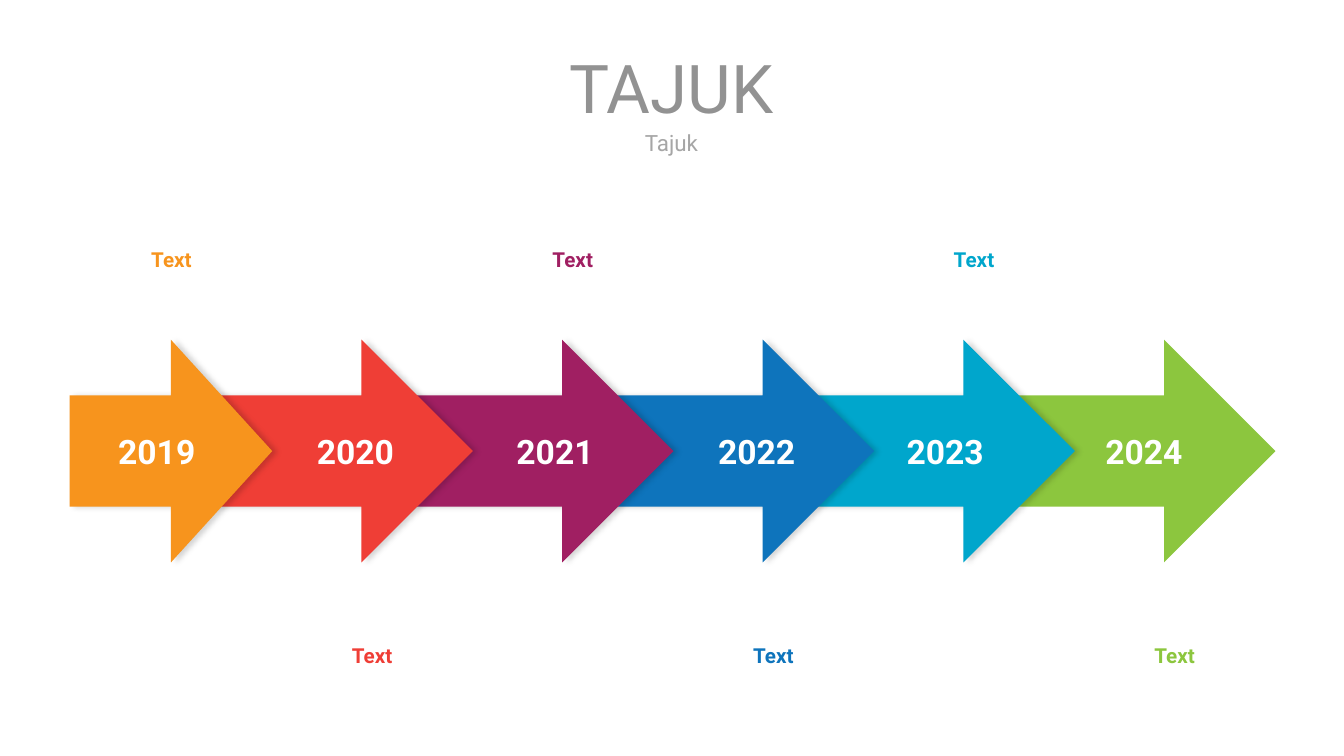
import pptx
import pptx.util
import pptx.dml.color
import pptx.enum.shapes
import pptx.enum.text
import lxml.etree
import pptx.oxml.ns

Inches = pptx.util.Inches
Pt = pptx.util.Pt
MSO_AUTO_SIZE = pptx.enum.text.MSO_AUTO_SIZE

COLORS = {
    "title": "929292",
    "subtitle": "A6A6A6",
    "white": "FFFFFF",
    "shadow": "000000",
    "orange": "F7941D",
    "red": "EF3E36",
    "purple": "A01F62",
    "blue": "0E74BC",
    "cyan": "00A6CC",
    "green": "8CC63E",
}
MILESTONES = [
    ("2019", "orange", 0.89),
    ("2020", "red", 2.86),
    ("2021", "purple", 4.84),
    ("2022", "blue", 6.84),
    ("2023", "cyan", 8.71),
    ("2024", "green", 10.68),
]
PITCH = 1.99
ARROW_WIDTH = 2.99
FIRST_ARROW_WIDTH = 2.01
CAPTION_WIDTH = 2.28
CAPTION_HEIGHT = 0.33


def rgb(name):
    return pptx.dml.color.RGBColor.from_string(COLORS[name])


def write(shape, text, size, color, bold=False, spacing=None, inset=0,
          wrap=True, auto_size=MSO_AUTO_SIZE.NONE):
    frame = shape.text_frame
    frame.margin_left = frame.margin_right = Inches(inset)
    frame.margin_top = frame.margin_bottom = Inches(inset / 2)
    frame.word_wrap = wrap
    frame.auto_size = auto_size
    frame.vertical_anchor = pptx.enum.text.MSO_ANCHOR.MIDDLE
    paragraph = frame.paragraphs[0]
    paragraph.alignment = pptx.enum.text.PP_ALIGN.CENTER
    if spacing:
        paragraph.line_spacing = spacing
    run = paragraph.add_run()
    run.text = text
    run.font.name = "Roboto"
    run.font.size = Pt(size)
    run.font.bold = bold
    run.font.color.rgb = rgb(color)


def add_text(slide, box, text, **style):
    write(slide.shapes.add_textbox(*map(Inches, box)), text, **style)


def add_shadow(shape):
    effects = shape._element.spPr.find(pptx.oxml.ns.qn("a:effectLst"))
    shadow = lxml.etree.SubElement(
        effects, pptx.oxml.ns.qn("a:outerShdw"),
        blurRad=str(Pt(4)), dist=str(Pt(3)), dir="0", algn="l", rotWithShape="0")
    color = lxml.etree.SubElement(
        shadow, pptx.oxml.ns.qn("a:srgbClr"), val=COLORS["shadow"])
    lxml.etree.SubElement(color, pptx.oxml.ns.qn("a:alpha"), val="17000")


def add_heading(slide, left, top, width):
    title = slide.shapes.title
    title.left, title.top = Inches(left), Inches(top)
    title.width, title.height = Inches(width), Inches(0.72)
    write(title, "TAJUK", size=48, color="title")
    add_text(slide, (left, top + 0.79, width, 0.25), "Tajuk",
             size=16, color="subtitle", wrap=False)


def add_arrows(slide, left, top, height):
    first_tip = left + FIRST_ARROW_WIDTH
    last = len(MILESTONES) - 1
    for index in range(last, -1, -1):
        width = ARROW_WIDTH if index else FIRST_ARROW_WIDTH
        tip = first_tip + index * PITCH
        arrow = slide.shapes.add_shape(
            pptx.enum.shapes.MSO_SHAPE.RIGHT_ARROW,
            *map(Inches, (tip - width, top, width, height)))
        arrow.fill.solid()
        arrow.fill.fore_color.rgb = rgb(MILESTONES[index][1])
        arrow.line.fill.background()
        arrow.shadow.inherit = False
        if index < last:
            add_shadow(arrow)
    for year, _, year_left in MILESTONES:
        add_text(slide, (year_left, top + height / 2 - 0.25, 1.33, 0.5), year,
                 size=24, color="white", bold=True, inset=0.1,
                 auto_size=MSO_AUTO_SIZE.SHAPE_TO_FIT_TEXT)


def add_captions(slide, left, top, height):
    for index, (_, color, _) in enumerate(MILESTONES):
        caption_top = top + (height - CAPTION_HEIGHT) * (index % 2)
        add_text(slide,
                 (left + index * PITCH, caption_top, CAPTION_WIDTH, CAPTION_HEIGHT),
                 "Text", size=14.7, color=color, bold=True, spacing=1.5,
                 auto_size=MSO_AUTO_SIZE.SHAPE_TO_FIT_TEXT)


def main():
    deck = pptx.Presentation()
    deck.slide_width, deck.slide_height = Inches(13.33), Inches(7.5)
    slide = deck.slides.add_slide(deck.slide_layouts[5])
    add_captions(slide, 0.56, 2.35, 4.25)
    add_heading(slide, 0.56, 0.5, 12.2)
    add_arrows(slide, 0.69, 3.37, 2.21)
    deck.save("out.pptx")


if __name__ == "__main__":
    main()
